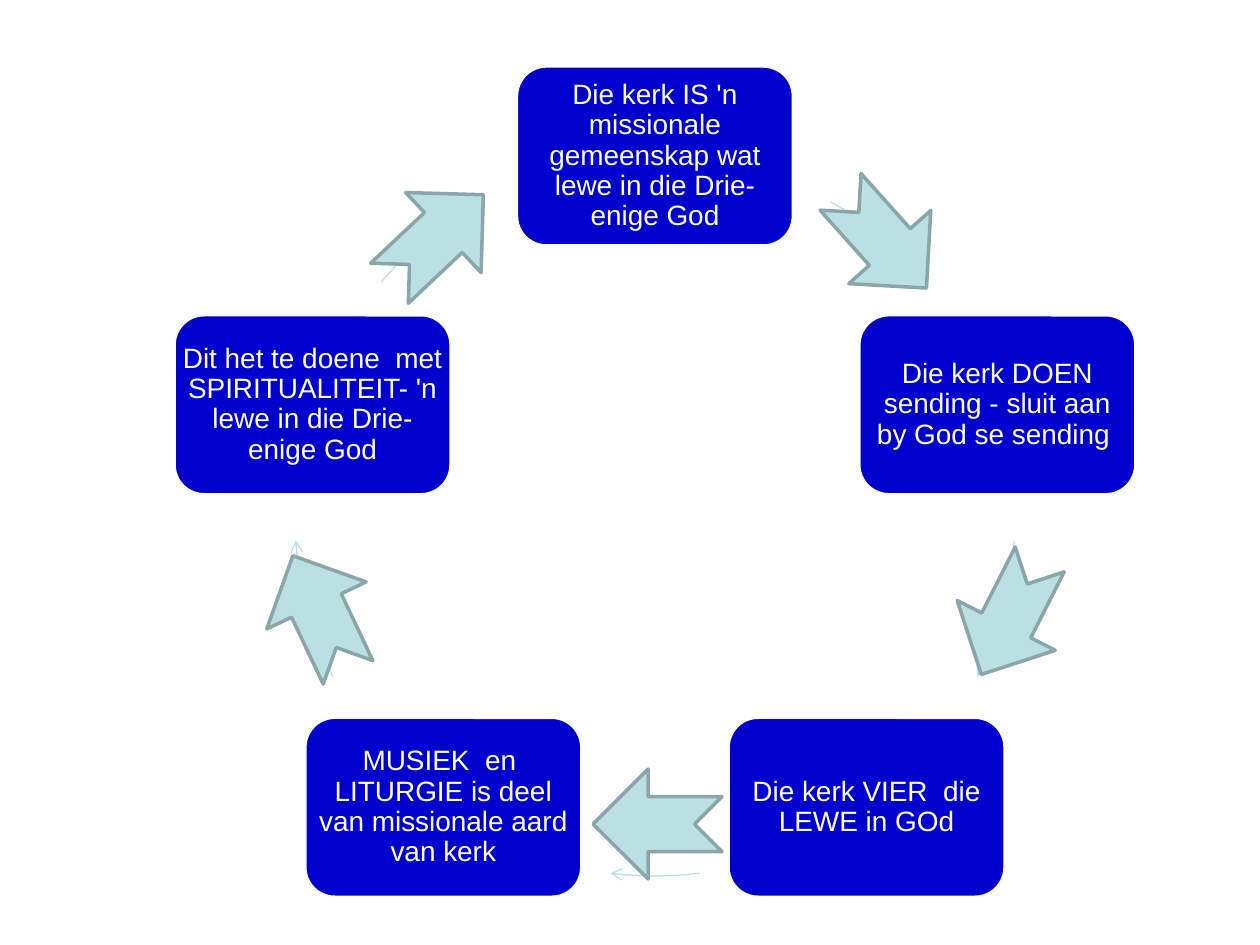
from dataclasses import dataclass
from math import cos, radians, sin

from lxml.etree import SubElement
from pptx import Presentation
from pptx.dml.color import RGBColor as Rgb
from pptx.enum.shapes import MSO_SHAPE as Kind
from pptx.enum.text import MSO_ANCHOR as Anchor, PP_ALIGN as Align
from pptx.oxml.ns import qn
from pptx.shapes.autoshape import Shape
from pptx.slide import Slide
from pptx.util import Emu, Pt

SCALE = 914400 / 126  # EMU in one px


@dataclass(frozen=True)
class Theme:
    box: Rgb = Rgb(0x00, 0x00, 0xCC)
    white: Rgb = Rgb(0xFF, 0xFF, 0xFF)
    pale: Rgb = Rgb(0xBB, 0xE0, 0xE3)
    edge: Rgb = Rgb(0x8A, 0xA6, 0xA8)
    font: str = "Arial"
    size: Pt = Pt(16)
    thick: Pt = Pt(2)
    thin: Pt = Pt(0.75)
    after: Pt = Pt(5.6)


@dataclass(frozen=True)
class Step:
    """A box on the ring, with the arc and the block arrow that follow it."""
    text: str
    start: float  # arc angles, clockwise from the right
    end: float
    left: int  # block arrow
    top: int
    turn: float


THEME = Theme()
MID_X, MID_Y, RADIUS = 655, 516, 360
BOX_W, BOX_H = 277, 180
ARROW_W, ARROW_H = 129, 110

STEPS = [
    Step("Die kerk IS 'n missionale gemeenskap wat lewe in die Drie-enige God",
         299.2, 319.4, 819, 185, 48.2),
    Step("Die kerk DOEN sending - sluit aan by God se sending ",
         3.9, 26.5, 946, 562, 116.9),
    Step("Die kerk VIER  die LEWE in GOd",
         82.9, 97.1, 593, 769, 180),
    Step("MUSIEK  en  LITURGIE is deel van missionale aard van kerk",
         153.5, 176.1, 256, 559, 244.7),
    Step("Dit het te doene  met SPIRITUALITEIT- 'n lewe in die Drie-enige God",
         220.6, 240.8, 372, 184, 316.7),
]


def px(num: float) -> Emu:
    return Emu(round(num * SCALE))


def add(slide: Slide, kind: Kind, left: float, top: float, wide: int,
        high: int, fill: Rgb | None, line: Rgb, width: Pt) -> Shape:
    shape = slide.shapes.add_shape(kind, px(left), px(top), px(wide), px(high))
    shape.shadow.inherit = False
    if fill is None:
        shape.fill.background()
    else:
        shape.fill.solid()
        shape.fill.fore_color.rgb = fill
    shape.line.color.rgb = line
    shape.line.width = width
    return shape


def add_box(slide: Slide, step: Step, angle: float) -> None:
    left = MID_X + RADIUS * cos(radians(angle)) - BOX_W / 2
    top = MID_Y + RADIUS * sin(radians(angle)) - BOX_H / 2
    box = add(slide, Kind.ROUNDED_RECTANGLE, left, top, BOX_W, BOX_H,
              THEME.box, THEME.white, THEME.thick)
    frame = box.text_frame
    frame.word_wrap = True
    frame.vertical_anchor = Anchor.MIDDLE
    # The rounded corners already inset the text
    frame.margin_left = frame.margin_right = 0
    frame.margin_top = frame.margin_bottom = 0
    para = frame.paragraphs[0]
    para.alignment = Align.CENTER
    para.line_spacing = 0.9
    para.space_after = THEME.after
    run = para.add_run()
    run.text = step.text
    run.font.name = THEME.font
    run.font.size = THEME.size
    run.font.color.rgb = THEME.white


def add_arc(slide: Slide, step: Step) -> None:
    arc = add(slide, Kind.ARC, MID_X - RADIUS, MID_Y - RADIUS, 2 * RADIUS,
              2 * RADIUS, None, THEME.pale, THEME.thin)
    # Angles are stored in 1/60000 degree, adjustments in 1/100000
    arc.adjustments[0] = step.start * 0.6
    arc.adjustments[1] = step.end * 0.6
    SubElement(arc.line._get_or_add_ln(), qn("a:tailEnd"), type="arrow")


def add_arrow(slide: Slide, step: Step) -> None:
    arrow = add(slide, Kind.NOTCHED_RIGHT_ARROW, step.left, step.top,
                ARROW_W, ARROW_H, THEME.pale, THEME.edge, THEME.thick)
    arrow.rotation = step.turn


def main() -> None:
    deck = Presentation()
    deck.slide_width, deck.slide_height = px(1260), px(945)
    slide = deck.slides.add_slide(deck.slide_layouts[6])

    # Ring of boxes, the first at the top, joined by thin arcs
    for spot, step in enumerate(STEPS):
        add_box(slide, step, -90 + spot * 360 / len(STEPS))
        add_arc(slide, step)

    # Block arrows on top
    for step in STEPS:
        add_arrow(slide, step)

    deck.save("out.pptx")


if __name__ == "__main__":
    main()
